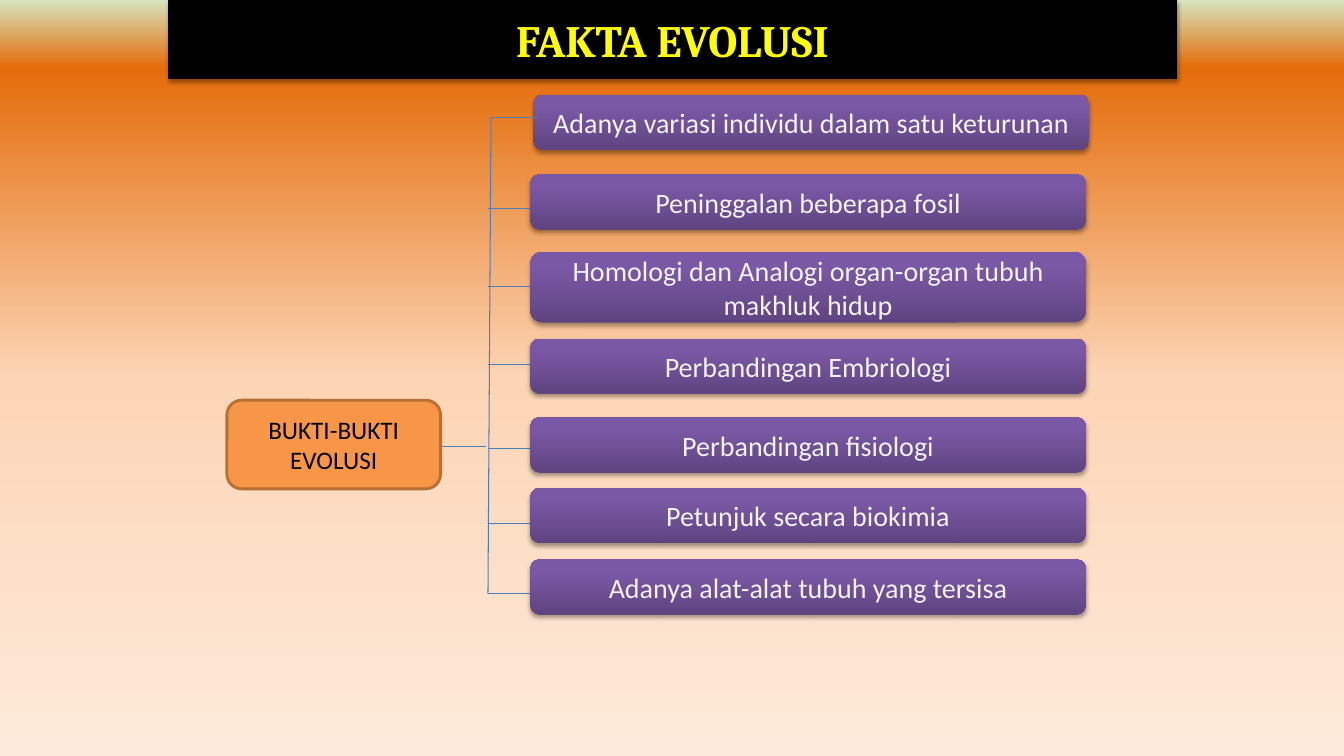
from dataclasses import dataclass

from lxml.etree import SubElement
from pptx import Presentation
from pptx.dml.color import RGBColor
from pptx.enum.shapes import MSO_CONNECTOR as CONNECTOR, MSO_SHAPE as SHAPE
from pptx.enum.text import MSO_ANCHOR as ANCHOR, PP_ALIGN as ALIGN
from pptx.oxml.ns import qn
from pptx.util import Inches, Pt


@dataclass(frozen=True)
class Theme:
    sky: tuple = ((0, "D7E4BD"), (9, "E46C0A"), (50, "FCD5B5"), (100, "FDEADA"))
    purple: tuple = ((0, "5F4480"), (80, "7B58A6"), (100, "7C57A8"))
    black: str = "000000"
    title: str = "FFFF00"
    root: str = "F79646"
    root_edge: str = "B76F34"
    root_text: str = "03070C"
    fact_text: str = "F2F2F2"
    branch: str = "4B7EBC"
    heading_font: str = "Cambria"
    body_font: str = "Calibri"
    title_size: int = 32
    fact_size: int = 20
    root_size: int = 18
    thin: float = 0.75


@dataclass(frozen=True)
class Fact:
    text: str
    top: float
    branch_y: float
    height: float = 0.55
    nudge: float = 0


THEME = Theme()
FACTS = (
    Fact("Adanya variasi individu dalam satu keturunan", 0.94, 1.17, nudge=0.03),
    Fact("Peninggalan beberapa fosil", 1.73, 2.07),
    Fact("Homologi dan Analogi organ-organ tubuh makhluk hidup", 2.5, 2.84, 0.7),
    Fact("Perbandingan Embriologi", 3.36, 3.62),
    Fact("Perbandingan fisiologi", 4.14, 4.45),
    Fact("Petunjuk secara biokimia", 4.84, 5.19),
    Fact("Adanya alat-alat tubuh yang tersisa", 5.55, 5.89),
)


def rgb(color):
    return RGBColor.from_string(color)


def set_gradient(fill, owner, stops, angle):
    """Fill with (percent, colour) stops; the angle runs counter-clockwise."""
    fill.gradient()
    fill.gradient_angle = angle
    stop_list = next(owner.iter(qn("a:gsLst")))
    for stop in list(stop_list):
        stop_list.remove(stop)
    for percent, color in stops:
        stop = SubElement(stop_list, qn("a:gs"), pos=str(percent * 1000))
        SubElement(stop, qn("a:srgbClr"), val=color)


def add_shadow(shape):
    effects = shape._element.spPr.find(qn("a:effectLst"))
    shadow = SubElement(effects, qn("a:outerShdw"), blurRad=str(Pt(3.1)),
                        dist=str(Pt(1.8)), dir="5400000", rotWithShape="0")
    color = SubElement(shadow, qn("a:srgbClr"), val=THEME.black)
    SubElement(color, qn("a:alpha"), val="35000")


def add_label(slide, kind, box, text, font_name, size, color, bold=False):
    """Add a shape with centred text, without shadow."""
    shape = slide.shapes.add_shape(kind, *map(Inches, box))
    shape.shadow.inherit = False
    frame = shape.text_frame
    frame.word_wrap = True
    frame.vertical_anchor = ANCHOR.MIDDLE
    paragraph = frame.paragraphs[0]
    paragraph.text = text
    paragraph.alignment = ALIGN.CENTER
    font = paragraph.font
    font.name, font.size, font.bold = font_name, Pt(size), bold
    font.color.rgb = rgb(color)
    return shape


def paint(shape, fill, edge, width):
    shape.fill.solid()
    shape.fill.fore_color.rgb = rgb(fill)
    shape.line.color.rgb = rgb(edge)
    shape.line.width = Pt(width)


def add_line(slide, *ends):
    line = slide.shapes.add_connector(CONNECTOR.STRAIGHT, *map(Inches, ends))
    line.line.color.rgb = rgb(THEME.branch)
    line.line.width = Pt(THEME.thin)
    SubElement(line._element.spPr, qn("a:effectLst"))


def add_title(slide, box):
    banner = add_label(slide, SHAPE.RECTANGLE, box, "FAKTA EVOLUSI",
                       THEME.heading_font, THEME.title_size, THEME.title, True)
    paint(banner, THEME.black, THEME.black, THEME.thin)
    add_shadow(banner)


def add_root(slide, box):
    root = add_label(slide, SHAPE.ROUNDED_RECTANGLE, box, "BUKTI-BUKTI EVOLUSI",
                     THEME.body_font, THEME.root_size, THEME.root_text)
    paint(root, THEME.root, THEME.root_edge, 2)
    left, top, width, height = box
    stem_y = top + height / 2 + 0.02
    add_line(slide, left + width, stem_y, left + width + 0.45, stem_y)


def add_fact(slide, fact, left, width):
    box = left + fact.nudge, fact.top, width, fact.height
    shape = add_label(slide, SHAPE.ROUNDED_RECTANGLE, box, fact.text,
                      THEME.body_font, THEME.fact_size, THEME.fact_text)
    set_gradient(shape.fill, shape._element.spPr, THEME.purple, 90)
    shape.line.fill.background()
    add_shadow(shape)


def add_fact_tree(slide, facts, left, width):
    """Place the facts in a column, joined to a spine on their left."""
    spine = left - 0.42

    def add_branch(fact):
        start = spine + fact.nudge
        add_line(slide, start, fact.branch_y, start + 0.46, fact.branch_y)

    first, last = facts[0], facts[-1]
    add_line(slide, spine + first.nudge, first.branch_y,
             spine + last.nudge, last.branch_y)
    for fact in facts[1:]:
        add_branch(fact)
    for fact in facts:
        add_fact(slide, fact, left, width)
    add_branch(first)  # the top branch lies over its box


def main():
    deck = Presentation()
    deck.slide_width, deck.slide_height = Inches(13.33), Inches(7.5)
    slide = deck.slides.add_slide(deck.slide_layouts[6])
    set_gradient(slide.background.fill, slide._element, THEME.sky, 270)
    add_root(slide, (2.25, 3.97, 2.12, 0.88))
    add_title(slide, (1.67, 0, 10, 0.78))
    add_fact_tree(slide, FACTS, left=5.26, width=5.51)
    deck.save("out.pptx")


if __name__ == "__main__":
    main()
